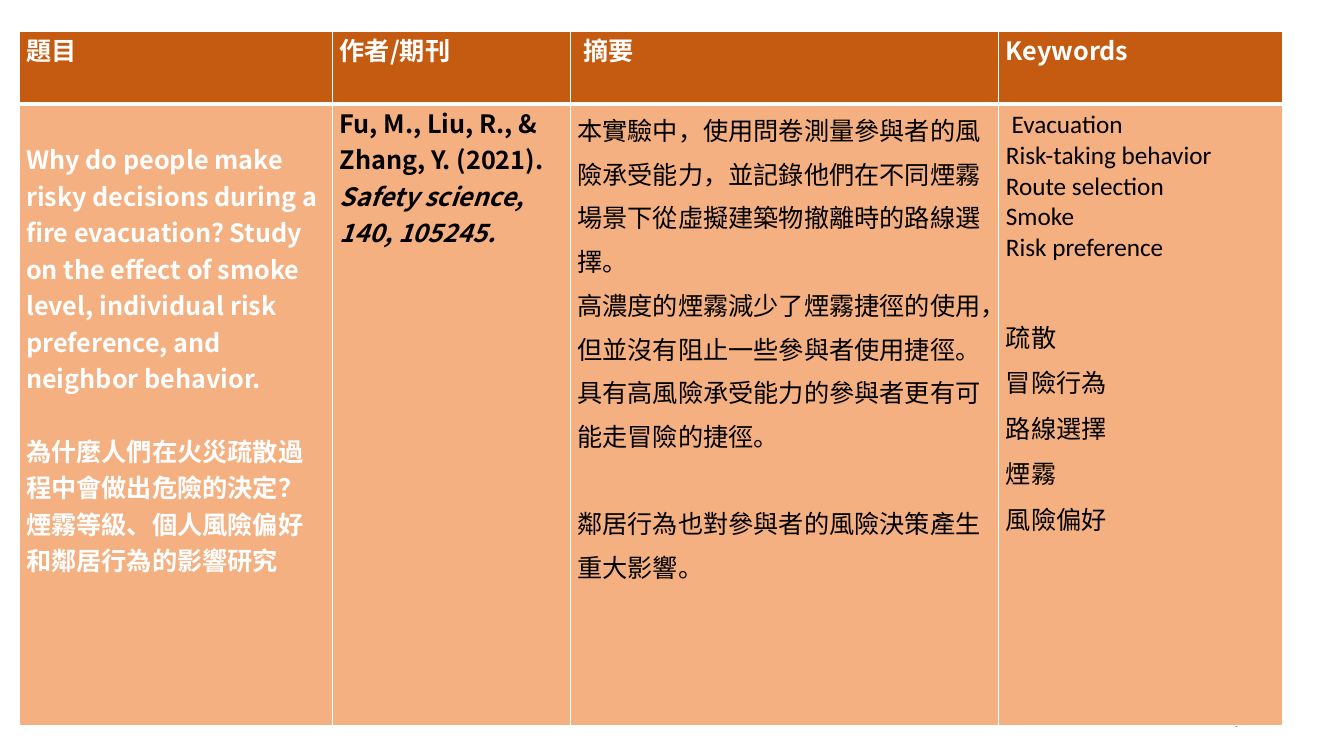
from lxml import etree
from pptx import Presentation, util as u
from pptx.dml.color import RGBColor
from pptx.enum import text
from pptx.oxml import ns

COLORS = {"header": "C55A11", "body": "F4B081", "line": "FFFFFF",
          "white": "FFFFFF", "black": "000000", "gray": "888888"}
CJK, LATIN = "Noto Sans CJK TC", "Calibri"

TITLE = {"name": CJK, "size": u.Pt(18), "bold": True, "color": "white"}
AUTHOR = {**TITLE, "color": "black"}
JOURNAL = {**AUTHOR, "italic": True}
PLAIN = {**AUTHOR, "bold": False}
KEYWORD = {**PLAIN, "name": LATIN}
PAGE = {"name": LATIN, "size": u.Pt(12), "color": "gray"}

ABSTRACT_SPACING = {"line_spacing": 1.2}
KEYWORD_SPACING = {"line_spacing": 1.25}


def paragraph(*runs, **layout):
    """Pair runs of (wording, style) with paragraph settings."""
    return runs, layout


HEADERS = ["題目", "作者/期刊", " 摘要", "Keywords"]
BODY = [
    [paragraph(("Why do people make risky decisions during a fire evacuation? Study on the effect "
                "of smoke level, individual risk preference, and neighbor behavior.", TITLE)),
     paragraph(("為什麼人們在火災疏散過程中會做出危險的決定？煙霧等級、個人風險偏好和鄰居行為的影響研究",
                TITLE), space_before=u.Pt(26))],
    [paragraph(("Fu, M., Liu, R., & Zhang, Y. (2021).", AUTHOR)),
     paragraph(("Safety science, 140, 105245.", JOURNAL))],
    [paragraph(("本實驗中，使用問卷測量參與者的風險承受能力，並記錄他們在不同煙霧場景下從虛擬建築物"
                "撤離時的路線選擇。", PLAIN), **ABSTRACT_SPACING),
     paragraph(("高濃度的煙霧減少了煙霧捷徑的使用，但並沒有阻止一些參與者使用捷徑。具有高風險承受能力的"
                "參與者更有可能走冒險的捷徑。", PLAIN), **ABSTRACT_SPACING),
     paragraph(("鄰居行為也對參與者的風險決策產生重大影響。", PLAIN),
               space_before=u.Pt(31), **ABSTRACT_SPACING)],
    [paragraph((" ", PLAIN), ("Evacuation", KEYWORD)),
     *[paragraph((word, KEYWORD)) for word in
       ["Risk-taking behavior", "Route selection", "Smoke", "Risk preference"]],
     paragraph(("疏散", PLAIN), space_before=u.Pt(32.5), **KEYWORD_SPACING),
     *[paragraph((word, PLAIN), **KEYWORD_SPACING) for word in
       ["冒險行為", "路線選擇", "煙霧", "風險偏好"]]],
]


class SlideBuilder:
    def __init__(self, presentation):
        self.slide = presentation.slides.add_slide(presentation.slide_layouts[6])

    def set_text(self, frame, paragraphs):
        for index, (runs, layout) in enumerate(paragraphs):
            item = frame.add_paragraph() if index else frame.paragraphs[0]
            for name, value in layout.items():
                setattr(item, name, value)
            for wording, style in runs:
                run = item.add_run()
                run.text = wording
                for name, value in style.items():
                    if name == "color":
                        run.font.color.rgb = RGBColor.from_string(COLORS[value])
                    else:
                        setattr(run.font, name, value)
                east_asian = etree.SubElement(run.font._element, ns.qn("a:ea"))
                east_asian.set("typeface", style["name"])

    def text_box(self, left, top, width, height, paragraphs):
        box = self.slide.shapes.add_textbox(*map(u.Cm, (left, top, width, height)))
        box.text_frame.word_wrap = True
        box.text_frame.vertical_anchor = text.MSO_ANCHOR.MIDDLE
        self.set_text(box.text_frame, paragraphs)

    def borders(self, cell, widths):
        """Draw the left, right, top and bottom edges, widths in points."""
        properties = cell._tc.get_or_add_tcPr()
        for side, width in zip("LRTB", widths):
            line = etree.SubElement(properties, ns.qn(f"a:ln{side}"), w=str(u.Pt(width)))
            fill = etree.SubElement(line, ns.qn("a:solidFill"))
            etree.SubElement(fill, ns.qn("a:srgbClr"), val=COLORS["line"])

    def cell(self, cell, paragraphs, fill, widths, top=0):
        self.borders(cell, widths)
        cell.fill.solid()
        cell.fill.fore_color.rgb = RGBColor.from_string(COLORS[fill])
        margins = {"margin_left": 0.18, "margin_right": 0.18,
                   "margin_top": top, "margin_bottom": 0}
        for name, value in margins.items():
            setattr(cell, name, u.Cm(value))
        self.set_text(cell.text_frame, paragraphs)

    def table(self, left, top, columns, rows):
        size = (left, top, sum(columns), sum(rows))
        table = self.slide.shapes.add_table(
            len(rows), len(columns), *map(u.Cm, size)).table
        table.horz_banding = False
        for column, width in zip(table.columns, columns):
            column.width = u.Cm(width)
        for row, height in zip(table.rows, rows):
            row.height = u.Cm(height)
        return table


def main():
    presentation = Presentation()
    presentation.slide_width, presentation.slide_height = u.Cm(33.87), u.Cm(19.05)
    builder = SlideBuilder(presentation)

    builder.text_box(23.92, 17.66, 7.62, 1.01,
                     [paragraph(("9", PAGE), alignment=text.PP_ALIGN.RIGHT)])
    table = builder.table(0.48, 0.79, [7.9, 5.99, 10.8, 7.14], [1.83, 15.67])
    for column, (header, body) in enumerate(zip(HEADERS, BODY)):
        builder.cell(table.cell(0, column), [paragraph((header, TITLE))],
                     "header", (1, 1, 1, 3))
        builder.cell(table.cell(1, column), body, "body", (1, 1, 3, 1),
                     top=0 if column else 0.92)

    presentation.save("out.pptx")


if __name__ == "__main__":
    main()
